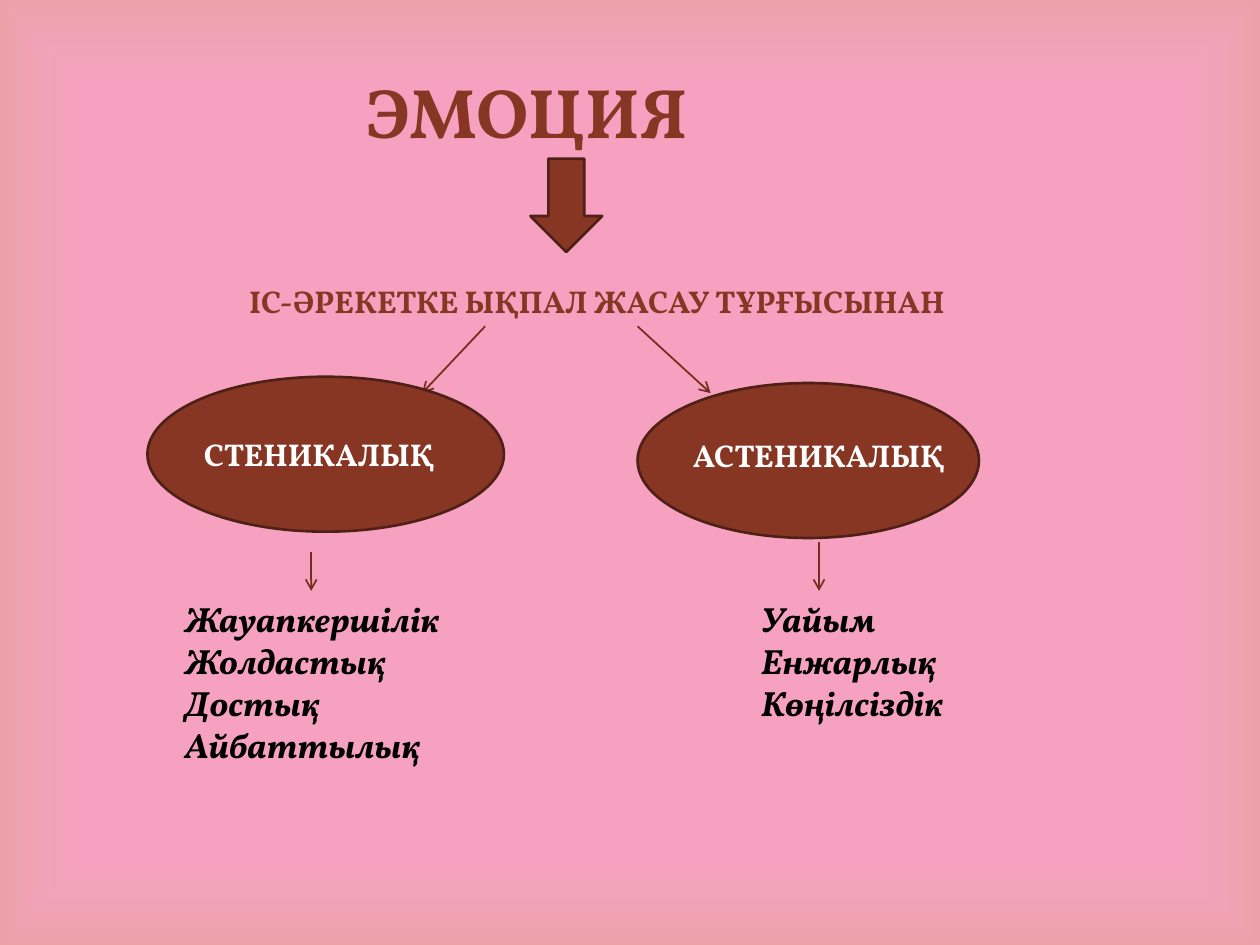
import lxml.etree
import pptx
import pptx.dml.color
import pptx.enum.shapes
import pptx.enum.text
import pptx.oxml
import pptx.oxml.ns
import pptx.util

Inches = pptx.util.Inches
Shapes = pptx.enum.shapes.MSO_SHAPE

THEME = {
    "font": "Vollkorn",
    "brown": "873624", "outline": "4F2015", "arrow": "742E1F",
    "white": "FFFFFF", "black": "000000",
    "background": ("E60A59", 43),
    "glow": [(83, "FFFFFF", 11), (100, "D1CA75", 23)],
    "title": 40, "label": 18, "list": 20,
    "outline_width": 1.5, "arrow_width": 1,
}
TITLE = ("ЭМОЦИЯ", (2.8, 0.49, 6.63, 0.77))
SUBTITLE = ("ІС-ӘРЕКЕТКЕ ЫҚПАЛ ЖАСАУ ТҰРҒЫСЫНАН", (1.88, 2.19, 6.77, 0.4))
DOWN_ARROW = (4.21, 1.26, 0.57, 0.74)
BRANCHES = [
    {
        "label": "СТЕНИКАЛЫҚ",
        "label_at": (1.52, 3.4, 2.13, 0.4),
        "ellipse_at": (1.17, 2.99, 2.83, 1.23),
        "arrows": [(3.85, 2.59, 3.35, 3.12), (2.47, 4.38, 2.47, 4.69)],
        "items": ["Жауапкершілік", "Жолдастық", "Достық", "Айбаттылық"],
        "items_at": (1.37, 4.69, 2.63, 1.78),
    },
    {
        "label": "АСТЕНИКАЛЫҚ",
        "label_at": (5.4, 3.41, 2.29, 0.4),
        "ellipse_at": (5.06, 3.04, 2.71, 1.23),
        "arrows": [(5.06, 2.59, 5.64, 3.12), (6.5, 4.3, 6.5, 4.69)],
        "items": ["Уайым", "Енжарлық", "Көңілсіздік"],
        "items_at": (5.94, 4.69, 2.28, 1.45),
    },
]


def rgb(name):
    return pptx.dml.color.RGBColor.from_string(THEME[name])


def add_child(parent, tag, **attributes):
    return lxml.etree.SubElement(parent, pptx.oxml.ns.qn(tag), attributes)


def add_clear_color(parent, color, percent):
    add_child(add_child(parent, "a:srgbClr", val=color), "a:alpha", val=str(percent * 1000))


def paint_background(slide):
    fill = slide.background.fill
    fill.solid()
    color, percent = THEME["background"]
    fill.fore_color.rgb = pptx.dml.color.RGBColor.from_string(color)
    solid_color = slide.element.find(".//" + pptx.oxml.ns.qn("a:srgbClr"))
    add_child(solid_color, "a:alpha", val=str(percent * 1000))


def add_glow(slide, width, height):
    glow = slide.shapes.add_shape(Shapes.RECTANGLE, 0, 0, width, height)
    glow.shadow.inherit = False
    glow.line.fill.background()
    glow.fill.gradient()
    gradient = glow.element.spPr.find(pptx.oxml.ns.qn("a:gradFill"))
    for child in list(gradient):
        gradient.remove(child)
    stops = add_child(gradient, "a:gsLst")
    for position, color, percent in THEME["glow"]:
        add_clear_color(add_child(stops, "a:gs", pos=str(position * 1000)), color, percent)
    center = add_child(gradient, "a:path", path="rect")
    add_child(center, "a:fillToRect", l="50000", t="50000", r="50000", b="50000")
    slide.shapes.element.insert(2, glow.element)


def write(box, lines, size, color, italic=False):
    frame = box.text_frame
    frame.word_wrap = True
    frame.auto_size = pptx.enum.text.MSO_AUTO_SIZE.NONE
    frame.vertical_anchor = pptx.enum.text.MSO_ANCHOR.TOP
    for index, line in enumerate(lines):
        para = frame.add_paragraph() if index else frame.paragraphs[0]
        para.alignment = pptx.enum.text.PP_ALIGN.LEFT
        span = para.add_run()
        span.text = line
        span.font.name = THEME["font"]
        span.font.size = pptx.util.Pt(THEME[size])
        span.font.bold = True
        span.font.italic = italic
        span.font.color.rgb = rgb(color)


def add_text(slide, lines, place, size, color, italic=False):
    box = slide.shapes.add_textbox(*map(Inches, place))
    write(box, lines, size, color, italic)


def add_title(slide):
    text, place = TITLE
    title = slide.shapes.title
    title.left, title.top, title.width, title.height = map(Inches, place)
    write(title, [text], "title", "brown")


def add_figure(slide, kind, place):
    figure = slide.shapes.add_shape(kind, *map(Inches, place))
    figure.shadow.inherit = False
    figure.fill.solid()
    figure.fill.fore_color.rgb = rgb("brown")
    figure.line.color.rgb = rgb("outline")
    figure.line.width = pptx.util.Pt(THEME["outline_width"])


def add_arrow(slide, ends):
    arrow = slide.shapes.add_connector(
        pptx.enum.shapes.MSO_CONNECTOR.STRAIGHT, *map(Inches, ends))
    arrow.line.color.rgb = rgb("arrow")
    arrow.line.width = pptx.util.Pt(THEME["arrow_width"])
    add_child(arrow.line._get_or_add_ln(), "a:tailEnd", type="arrow")
    add_child(arrow.element.spPr, "a:effectLst")


def main():
    deck = pptx.Presentation()
    deck.slide_width, deck.slide_height = Inches(10), Inches(7.5)
    slide = deck.slides.add_slide(deck.slide_layouts[5])
    paint_background(slide)
    add_glow(slide, deck.slide_width, deck.slide_height)
    add_title(slide)
    text, place = SUBTITLE
    add_text(slide, [text], place, "label", "brown")
    add_figure(slide, Shapes.DOWN_ARROW, DOWN_ARROW)
    for branch in BRANCHES:
        for ends in branch["arrows"]:
            add_arrow(slide, ends)
        add_figure(slide, Shapes.OVAL, branch["ellipse_at"])
        add_text(slide, [branch["label"]], branch["label_at"], "label", "white")
        add_text(slide, branch["items"], branch["items_at"], "list", "black", italic=True)
    deck.save("out.pptx")


if __name__ == "__main__":
    main()
